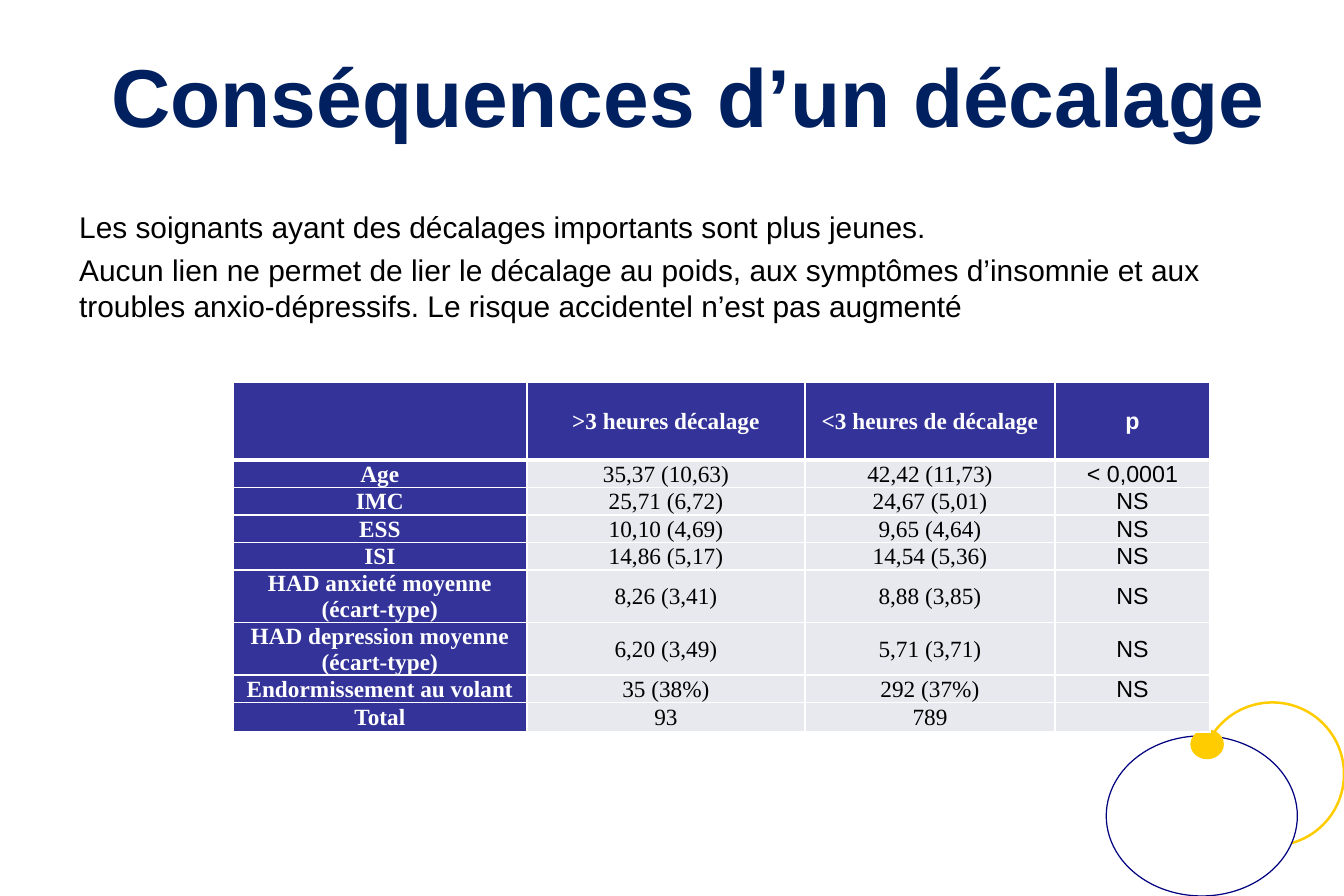
"""Build the slide on the consequences of a sleep schedule shift among carers."""
from lxml.etree import SubElement
from pptx import Presentation
from pptx.dml.color import RGBColor
from pptx.enum.shapes import MSO_SHAPE as Shape
from pptx.enum.text import MSO_ANCHOR as Anchor, MSO_AUTO_SIZE as AutoSize, PP_ALIGN as Align
from pptx.oxml.ns import qn
from pptx.util import Inches, Pt

NAVY, INDIGO, GOLD = "002060", "333399", "FFCC00"
WHITE, BLACK, PALE = "FFFFFF", "000000", "E8E8EF"
SANS, SERIF = "Arial", "Times New Roman"

presentation = Presentation()
presentation.slide_width, presentation.slide_height = Inches(11.25), Inches(7.5)
slide = presentation.slides.add_slide(presentation.slide_layouts[1])
percent_x, percent_y = presentation.slide_width / 100, presentation.slide_height / 100


def place(left, top, width, height):
    """Turn percentages of the slide into lengths."""
    return [round(share * unit) for share, unit in
            zip((left, top, width, height), (percent_x, percent_y) * 2)]


def add_run(paragraph, text, size, color, font=SANS, bold=False):
    """Add one formatted run."""
    run = paragraph.add_run()
    run.text = text
    run.font.name, run.font.size, run.font.bold = font, Pt(size), bold
    run.font.color.rgb = RGBColor.from_string(color)


circles = [
    ((89.33, 78.4, 10.67, 16), None, GOLD, 1.5),
    ((82.31, 82.13, 14.22, 17.87), WHITE, "000080", 0.75),
    ((88.62, 81.47, 2.4, 3.2), GOLD, GOLD, 0.75),
]
for position, fill, line, weight in circles:
    circle = slide.shapes.add_shape(Shape.OVAL, *place(*position))
    circle.shadow.inherit = False
    if fill:
        circle.fill.solid()
        circle.fill.fore_color.rgb = RGBColor.from_string(fill)
    else:
        circle.fill.background()
    circle.line.color.rgb = RGBColor.from_string(line)
    circle.line.width = Pt(weight)

title, body = slide.placeholders
for placeholder, top, anchor in ((title, 2.27, Anchor.MIDDLE), (body, 22.67, Anchor.TOP)):
    (placeholder.left, placeholder.top,
     placeholder.width, placeholder.height) = place(5, top, 90, 16.67)
    placeholder.text_frame.vertical_anchor = anchor
    placeholder.text_frame.auto_size = AutoSize.NONE
    placeholder.text_frame.word_wrap = True

heading = title.text_frame.paragraphs[0]
heading.alignment = Align.RIGHT
add_run(heading, "Conséquences d’un décalage", 49.5, NAVY, bold=True)

findings = [
    "Les soignants ayant des décalages importants sont plus jeunes.",
    "Aucun lien ne permet de lier le décalage au poids, aux symptômes d’insomnie et aux "
    "troubles anxio-dépressifs. Le risque accidentel n’est pas augmenté",
]
for index, finding in enumerate(findings):
    paragraph = body.text_frame.add_paragraph() if index else body.text_frame.paragraphs[0]
    properties = paragraph._p.get_or_add_pPr()
    properties.set("marL", "0")
    properties.set("indent", "0")
    SubElement(properties, qn("a:buNone"))
    paragraph.space_before = Pt(4 if index else 0)
    add_run(paragraph, finding, 18, BLACK)

rows = [
    ("", ">3 heures décalage", "<3 heures de décalage", "p"),
    ("Age", "35,37 (10,63)", "42,42 (11,73)", "< 0,0001"),
    ("IMC", "25,71 (6,72)", "24,67 (5,01)", "NS"),
    ("ESS", "10,10 (4,69)", "9,65 (4,64)", "NS"),
    ("ISI", "14,86 (5,17)", "14,54 (5,36)", "NS"),
    ("HAD anxieté moyenne (écart-type)", "8,26 (3,41)", "8,88 (3,85)", "NS"),
    ("HAD depression moyenne (écart-type)", "6,20 (3,49)", "5,71 (3,71)", "NS"),
    ("Endormissement au volant", "35 (38%)", "292 (37%)", "NS"),
    ("Total", "93", "789", ""),
]
column_shares = [21.87, 20.71, 18.58, 11.56]
row_shares = [8.67] + [3.07] * 4 + [5.87] * 2 + [3.07] * 2
table = slide.shapes.add_table(
    len(rows), len(column_shares),
    *place(17.33, 42.67, sum(column_shares), sum(row_shares))).table
for column, share in zip(table.columns, column_shares):
    column.width = round(share * percent_x)
for row, share in zip(table.rows, row_shares):
    row.height = round(share * percent_y)

for row_index, row in enumerate(rows):
    for column_index, text in enumerate(row):
        cell = table.cell(row_index, column_index)
        is_heading = row_index == 0 or column_index == 0
        cell.vertical_anchor = Anchor.MIDDLE
        cell.margin_left = cell.margin_top = cell.margin_right = Inches(0.01)
        cell.margin_bottom = 0
        for side in "LRTB":
            under_header = (row_index, side) in ((0, "B"), (1, "T"))
            border = SubElement(cell._tc.get_or_add_tcPr(), qn(f"a:ln{side}"),
                                w=str(Pt(3 if under_header else 1)))
            SubElement(SubElement(border, qn("a:solidFill")), qn("a:srgbClr"), val=WHITE)
        cell.fill.solid()
        cell.fill.fore_color.rgb = RGBColor.from_string(INDIGO if is_heading else PALE)
        paragraph = cell.text_frame.paragraphs[0]
        paragraph.alignment = Align.CENTER
        if text:
            add_run(paragraph, text, 14, WHITE if is_heading else BLACK,
                    SANS if column_index == 3 else SERIF, is_heading)
        else:
            SubElement(paragraph._p, qn("a:endParaRPr"), sz="1400")

presentation.save("out.pptx")
